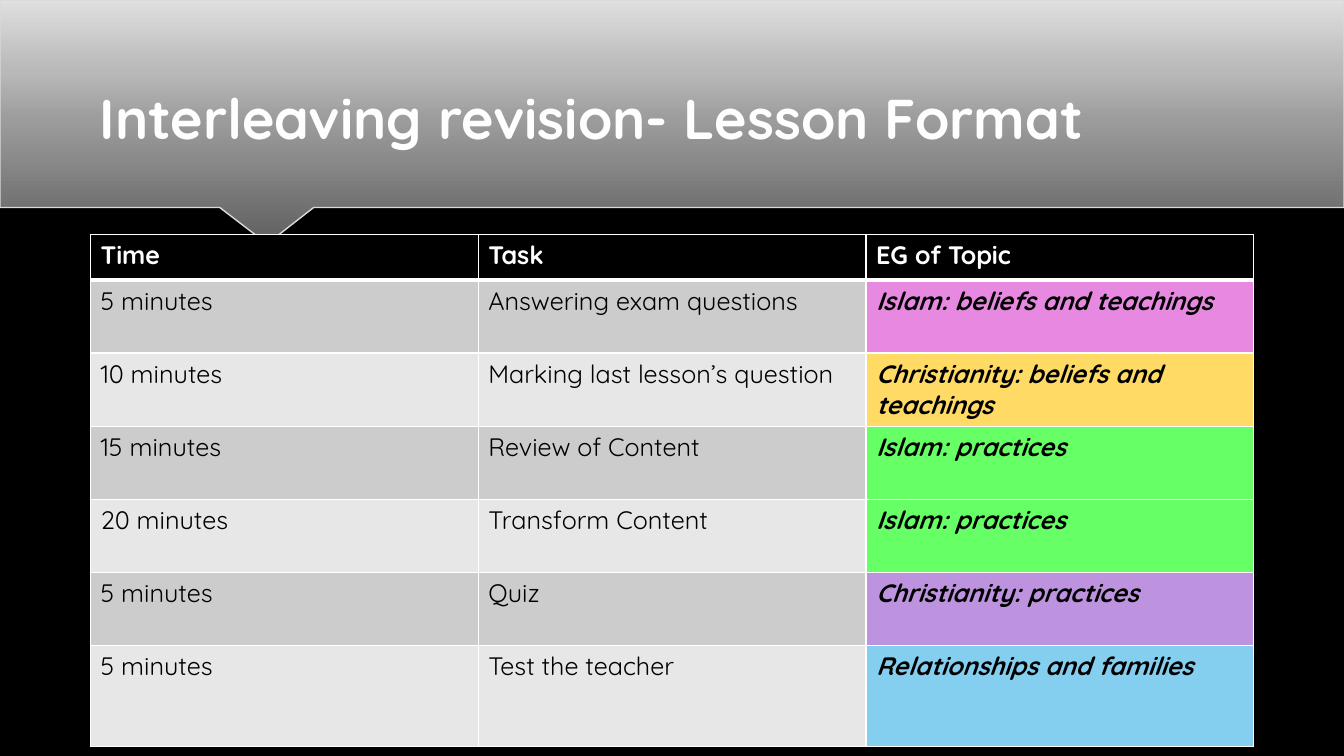
from dataclasses import dataclass

from lxml.etree import SubElement
from pptx import Presentation
from pptx.dml.color import RGBColor
from pptx.enum.text import MSO_ANCHOR, PP_ALIGN
from pptx.oxml import parse_xml
from pptx.oxml.ns import nsdecls, qn
from pptx.util import Pt


@dataclass(frozen=True)
class Theme:
    font: str = "Quicksand"
    title_size: int = 40
    cell_size: int = 18
    black: str = "000000"
    white: str = "FFFFFF"
    title: str = "FEFEFE"
    banner_line: str = "DADADA"
    bands: tuple = ("CCCCCC", "E7E7E7")
    banner_stops: tuple = ((0, "616161"), (50, "9C9C9C"), (70, "B8B8B8"), (100, "DFDFDF"))
    pink: str = "E789E0"
    yellow: str = "FFDA65"
    green: str = "66FF66"
    purple: str = "BD92DE"
    blue: str = "84CFF0"


T = Theme()
HEADINGS = ("Time", "Task", "EG of Topic")
LESSON = (
    ("5 minutes", "Answering exam questions", "Islam: beliefs and teachings", T.pink),
    ("10 minutes", "Marking last lesson’s question", "Christianity: beliefs and teachings", T.yellow),
    ("15 minutes", "Review of Content", "Islam: practices", T.green),
    ("20 minutes", "Transform Content", "Islam: practices", T.green),
    ("5 minutes", "Quiz", "Christianity: practices", T.purple),
    ("5 minutes", "Test the teacher", "Relationships and families", T.blue),
)
BANNER = ((0, 0), (0, 148.3), (157, 148.3), (187.2, 171.4), (189, 172), (192.5, 172),
          (194.4, 171.4), (224, 148.3), (960, 148.3))


def write(tf, text, size, color, bold=False, italic=False):
    p = tf.paragraphs[0]
    p.alignment = PP_ALIGN.LEFT
    r = p.add_run()
    r.text = text
    f = r.font
    f.name, f.size, f.bold, f.italic = T.font, Pt(size), bold, italic
    f.color.rgb = RGBColor.from_string(color)
    return r


def shadow(blur, distance, alpha):
    """Return an effect list holding one downward black shadow."""
    return parse_xml(
        f'<a:effectLst {nsdecls("a")}><a:outerShdw blurRad="{Pt(blur)}" dist="{Pt(distance)}" '
        f'dir="5400000" algn="ctr" rotWithShape="0"><a:srgbClr val="{T.black}">'
        f'<a:alpha val="{alpha * 1000}"/></a:srgbClr></a:outerShdw></a:effectLst>')


def add_banner(s):
    builder = s.shapes.build_freeform(Pt(960), Pt(0), scale=1.0)
    builder.add_line_segments([(Pt(x), Pt(y)) for x, y in BANNER], close=True)
    sp = builder.convert_to_shape()
    sp.line.color.rgb = RGBColor.from_string(T.banner_line)
    sp.line.width = Pt(1)
    stops = "".join(f'<a:gs pos="{pos * 1000}"><a:srgbClr val="{color}"/></a:gs>'
                    for pos, color in T.banner_stops)
    props = sp.element.spPr
    line = props.find(qn("a:ln"))
    line.addprevious(parse_xml(
        f'<a:gradFill {nsdecls("a")} rotWithShape="1"><a:gsLst>{stops}</a:gsLst>'
        '<a:lin ang="16200000" scaled="0"/></a:gradFill>'))
    line.addnext(shadow(4, 3, 35))
    return sp


def add_title(s, text):
    sp = s.shapes.title
    sp.left, sp.top, sp.width, sp.height = Pt(64), Pt(35.3), Pt(832), Pt(76.3)
    sp.text_frame.vertical_anchor = MSO_ANCHOR.BOTTOM
    r = write(sp.text_frame, text, T.title_size, T.title, bold=True)
    r.font.color  # colour element precedes the shadow
    r.font._element.find(qn("a:solidFill")).addnext(shadow(4, 2, 60))
    return sp


def set_borders(cell, top, bottom):
    props = cell._tc.get_or_add_tcPr()
    for i, (side, width) in enumerate((("L", 1), ("R", 1), ("T", top), ("B", bottom))):
        ln = SubElement(props, qn(f"a:ln{side}"), w=str(Pt(width)))
        fill = SubElement(ln, qn("a:solidFill"))
        SubElement(fill, qn("a:srgbClr"), val=T.white)
        props.insert(i, ln)


def fill_cell(cell, text, fill, color=T.black, top=1, bottom=1, **style):
    cell.fill.solid()
    cell.fill.fore_color.rgb = RGBColor.from_string(fill)
    set_borders(cell, top, bottom)
    write(cell.text_frame, text, T.cell_size, color, **style)


def add_lesson_table(s):
    heights = (32.4, *[52.2] * 5, 72)
    table = s.shapes.add_table(len(heights), len(HEADINGS), Pt(64.6), Pt(167.5),
                               Pt(831), Pt(sum(heights))).table
    for row, height in zip(table.rows, heights):
        row.height = Pt(height)
    for col, heading in enumerate(HEADINGS):
        table.columns[col].width = Pt(277)
        fill_cell(table.cell(0, col), heading, T.black, T.white, bottom=3, bold=True)
    for row, (time, task, topic, color) in enumerate(LESSON, start=1):
        band = T.bands[(row - 1) % 2]
        top = 3 if row == 1 else 1
        fill_cell(table.cell(row, 0), time, band, top=top)
        fill_cell(table.cell(row, 1), task, band, top=top)
        fill_cell(table.cell(row, 2), topic, color, top=top, bold=True, italic=True)


def main():
    prs = Presentation()
    prs.slide_width, prs.slide_height = Pt(960), Pt(540)
    s = prs.slides.add_slide(prs.slide_layouts[5])
    s.background.fill.solid()
    s.background.fill.fore_color.rgb = RGBColor.from_string(T.black)
    title = add_title(s, "Interleaving revision- Lesson Format")
    title.element.addprevious(add_banner(s).element)
    add_lesson_table(s)
    prs.save("out.pptx")


if __name__ == "__main__":
    main()
